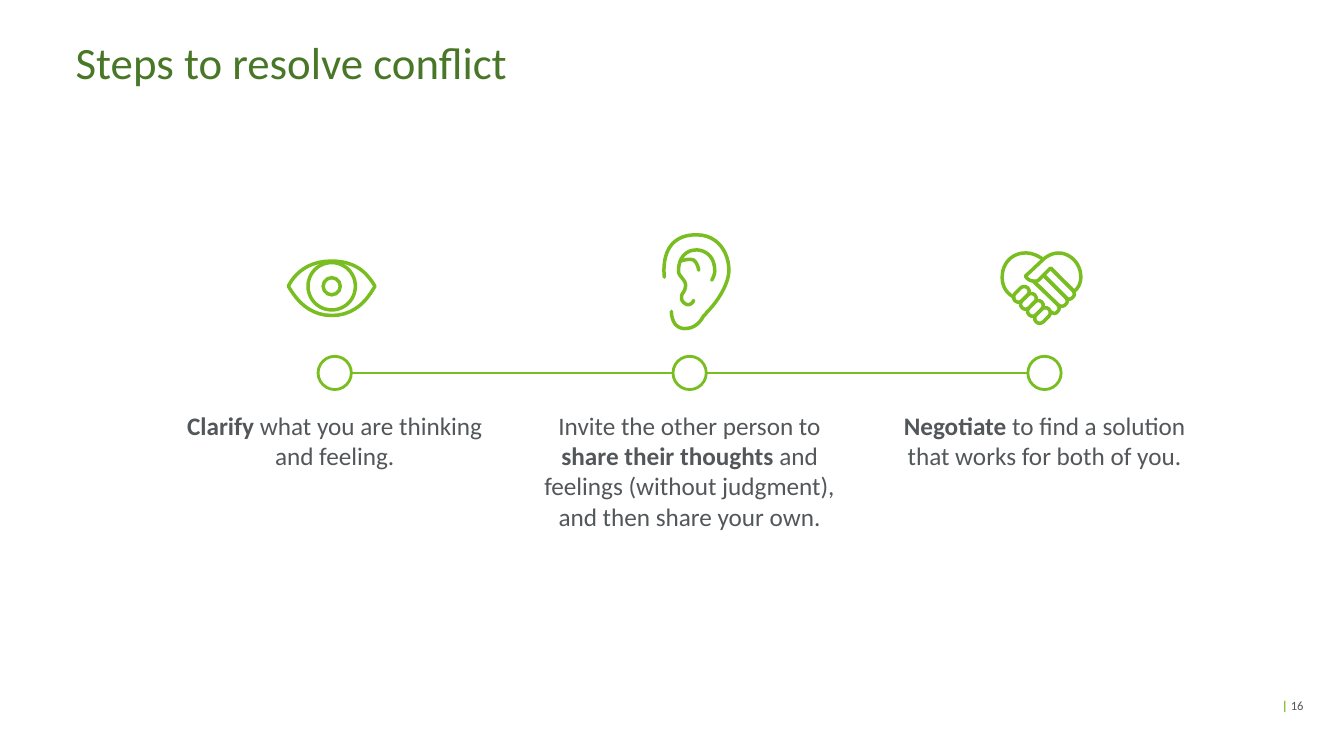
import pptx
import pptx.dml.color
import pptx.enum.shapes
import pptx.enum.text
import pptx.util
from lxml import etree
from pptx.oxml.ns import qn

GREEN, DARK, GREY = "78BE20", "497728", "53575A"
SHAPE = pptx.enum.shapes.MSO_SHAPE
ALIGN = pptx.enum.text.PP_ALIGN
ANCHOR = pptx.enum.text.MSO_ANCHOR

FIRST, PITCH = 3.32, 3.52  # centre of the first column, column step
AXIS, DOT = 3.7, 0.33      # height of the timeline, size of its dots
TEXT_W = 2.99
UNIT = 0.01                # icon grid, inches
STROKE = 2.5

STEPS = [
    [("Clarify ", True), ("what you are thinking and feeling.", False)],
    [("Invite the other person to ", False), ("share their thoughts ", True),
     ("and feelings (without judgment), and then share your own.", False)],
    [("Negotiate", True),
     (" to find a solution that works for both of you.", False)],
]

# Each stroke: a start point, then lines (x, y) or Bezier curves (6 numbers).
EYE = [
    [(2, 27), (5, 21, 16, 2, 45, 2), (58, 2, 70, 6, 78, 14),
     (84, 20, 86, 24, 88, 27), (84, 33, 73, 56, 45, 56),
     (18, 56, 6, 33, 2, 27)],
]
EAR = [
    [(12, 78), (12, 79, 12, 86, 16, 91), (19, 94, 22, 95, 25, 95),
     (35, 95, 40, 89, 43, 84), (44, 82, 46, 81, 47, 79),
     (60, 66, 69, 49, 69, 37), (69, 21, 59, 2, 37, 2),
     (26, 2, 18, 5, 12, 12), (2, 24, 5, 44, 5, 44)],
    [(34, 67), (33, 70, 30, 72, 27, 71), (24, 70, 22, 67, 22, 65),
     (22, 63, 22, 61, 24, 59), (25, 57, 26, 55, 26, 52),
     (26, 48, 23, 46, 22, 44), (20, 42, 19, 40, 19, 38),
     (19, 25, 26, 17, 37, 17), (43, 17, 55, 21, 55, 38),
     (55, 42, 52, 47, 52, 47)],
    [(21, 28), (27, 26, 31, 26, 34, 27), (38, 30, 39, 37, 39, 37)],
]
HANDS = [
    [(50, 17), (39, 28), (37, 30, 36, 30, 34, 30), (30, 30, 27, 28, 25, 25),
     (41, 10), (41, 10, 48, 2, 58, 2), (68, 2, 80, 11, 80, 26),
     (80, 26, 80, 36, 73, 40), (50, 17)],
    [(14, 46), (6, 42, 2, 35, 2, 26), (2, 12, 12, 2, 25, 2),
     (32, 2, 38, 5, 42, 8)],
    [(50, 17), (72, 39), (74, 42, 74, 44, 72, 46),
     (69, 49, 67, 48, 65, 46), (43, 24)],
    [(43, 24), (65, 46), (67, 49, 67, 51, 65, 53),
     (62, 56, 59, 55, 57, 53), (33, 30)],
    [(33, 30), (57, 53), (59, 56, 59, 58, 57, 60), (55, 63, 52, 62, 50, 60)],
]


def inch(size):
    return pptx.util.Inches(size)


def paint(target, tone):
    target.rgb = pptx.dml.color.RGBColor.from_string(tone)


def outline(shape, width):
    """Leave the shape unfilled, with a green round-ended line."""
    shape.shadow.inherit = False
    shape.fill.background()
    paint(shape.line.color, GREEN)
    shape.line.width = pptx.util.Pt(width)
    line = shape.line._ln
    line.set("cap", "rnd")
    etree.SubElement(line, qn("a:round"))


def place(shape, left, top, width, height):
    shape.left, shape.top = inch(left), inch(top)
    shape.width, shape.height = inch(width), inch(height)


def oval(shapes, x, y, size, width):
    """Draw a ring round the centre x, y."""
    ring = shapes.add_shape(SHAPE.OVAL, inch(x - size / 2), inch(y - size / 2),
                            inch(size), inch(size))
    outline(ring, width)


def trace(stroke, count=12):
    """Turn a stroke into a list of points."""
    points = [stroke[0]]
    for part in stroke[1:]:
        if len(part) == 2:
            points.append(part)
            continue
        knots = [points[-1], part[:2], part[2:4], part[4:]]
        for n in range(1, count + 1):
            t = n / count
            mix = ((1 - t) ** 3, 3 * t * (1 - t) ** 2,
                   3 * t * t * (1 - t), t ** 3)
            points.append(tuple(sum(m * k[axis] for m, k in zip(mix, knots))
                                for axis in (0, 1)))
    return points


def icon(slide, strokes, left, top):
    """Draw the strokes in a group and return its shapes."""
    shapes = slide.shapes.add_group_shape().shapes
    for stroke in strokes:
        points = [(inch(left + x * UNIT), inch(top + y * UNIT))
                  for x, y in trace(stroke)]
        pen = shapes.build_freeform(*points[0])
        pen.add_line_segments(points[1:], close=stroke[0] == stroke[-1][-2:])
        outline(pen.convert_to_shape(), STROKE)
    return shapes


def thumbs(shapes, left, top):
    """Draw the row of four slanted fingertips."""
    for n in range(4):
        x, y = left + 0.07 * n, top + 0.07 * n
        tip = shapes.add_shape(SHAPE.ROUNDED_RECTANGLE, inch(x - 0.09),
                               inch(y - 0.05), inch(0.18), inch(0.1))
        tip.adjustments[0] = 0.5
        tip.rotation = -45
        outline(tip, STROKE)


def write(shape, parts, size, align, anchor=ANCHOR.TOP, space=0):
    """Fill a shape with one paragraph of (text, bold, colour) runs."""
    frame = shape.text_frame
    frame.word_wrap = True
    frame.auto_size = pptx.enum.text.MSO_AUTO_SIZE.NONE
    frame.vertical_anchor = anchor
    frame.margin_left = frame.margin_right = 0
    frame.margin_top = frame.margin_bottom = 0
    para = frame.paragraphs[0]
    para.alignment = align
    para.space_before = para.space_after = pptx.util.Pt(space)
    for text, bold, tone in parts:
        run = para.add_run()
        run.text = text
        run.font.name = "Calibri"
        run.font.size = pptx.util.Pt(size)
        run.font.bold = bold
        paint(run.font.color, tone)
    return para


def plain(para):
    """Remove the bullet and its indent."""
    props = para._p.get_or_add_pPr()
    props.set("marL", "0")
    props.set("indent", "0")
    etree.SubElement(props, qn("a:buNone"))


def link(slide, start, end):
    line = slide.shapes.add_connector(
        pptx.enum.shapes.MSO_CONNECTOR.STRAIGHT,
        inch(start), inch(AXIS), inch(end), inch(AXIS))
    paint(line.line.color, GREEN)
    line.line.width = pptx.util.Pt(2)
    etree.SubElement(line._element.spPr, qn("a:effectLst"))


def main():
    deck = pptx.Presentation()
    deck.slide_width, deck.slide_height = inch(13.33), inch(7.5)
    slide = deck.slides.add_slide(deck.slide_layouts[4])
    title, *bodies = slide.placeholders

    place(title, 0.75, 0.4, 12.18, 0.66)
    head = write(title, [("Steps to resolve conflict", False, DARK)],
                 32, ALIGN.LEFT)
    head.line_spacing = 0.9

    for n, (body, step) in enumerate(zip(bodies, STEPS)):
        x = FIRST + n * PITCH
        oval(slide.shapes, x, AXIS, DOT, 2)
        if n:
            link(slide, x - PITCH + DOT / 2, x - DOT / 2)
        place(body, x - TEXT_W / 2, 4.07, TEXT_W, 1.4)
        parts = [(text, bold, GREY) for text, bold in step]
        plain(write(body, parts, 18, ALIGN.CENTER, space=3))
    for spare in bodies[len(STEPS):]:
        spare._element.getparent().remove(spare._element)

    eye = icon(slide, EYE, 2.84, 2.57)
    for size in (0.47, 0.17):
        oval(eye, 3.29, 2.84, size, STROKE)
    icon(slide, EAR, 6.54, 2.31)
    thumbs(icon(slide, HANDS, 9.92, 2.49), 10.13, 2.92)

    number = slide.shapes.add_textbox(inch(11.6), inch(6.83),
                                      inch(1.33), inch(0.33))
    write(number, [("| ", True, GREEN), ("16", False, GREY)],
          9, ALIGN.RIGHT, ANCHOR.MIDDLE)
    deck.save("out.pptx")


if __name__ == "__main__":
    main()
